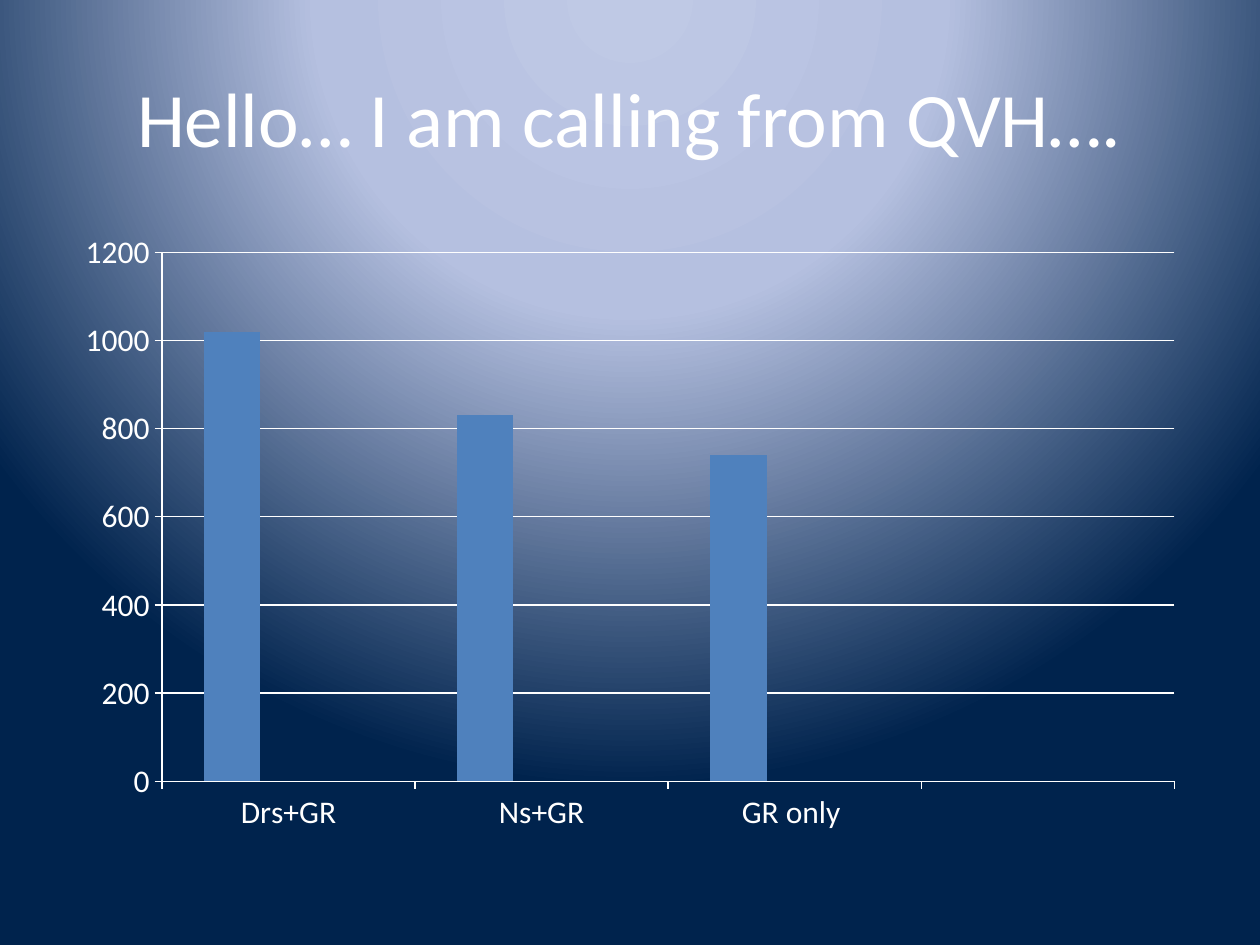
"""Build a slide with a column chart of call counts."""
from pptx import Presentation, oxml
from pptx.chart.data import CategoryChartData
from pptx.dml.color import RGBColor
from pptx.enum import chart as ch, text
from pptx.oxml import ns
from pptx.util import Cm, Pt

FONT = "Calibri"
HEX = {
    "white": "FFFFFF", "glow": "BFC9E5", "mid": "B5C0E0", "navy": "00234D",
    "blue": "4F81BD", "red": "C0504D", "green": "9BBB59",
}
STOPS = [(0, "glow"), (40, "mid"), (100, "navy")]
CATS = ["Drs+GR", "Ns+GR", "GR only ", ""]
ROWS = [
    ("Series 1", [1020, 830, 740, None], "blue"),
    ("Series 2", [None] * 4, "red"),
    ("Series 3", [None] * 4, "green"),
]


def rgb(name):
    """Return a named colour."""
    return RGBColor.from_string(HEX[name])


def style(font, size):
    """Set the face, size and white colour of a font."""
    font.name = FONT
    font.size = Pt(size)
    font.color.rgb = rgb("white")


def add_back(slide):
    """Fill the background with a round gradient lit from the top."""
    stops = "".join(
        f'<a:gs pos="{pos * 1000}"><a:srgbClr val="{HEX[name]}"/></a:gs>'
        for pos, name in STOPS
    )
    back = oxml.parse_xml(
        f'<p:bg {ns.nsdecls("p", "a")}><p:bgPr><a:gradFill rotWithShape="1">'
        f'<a:gsLst>{stops}</a:gsLst><a:path path="circle">'
        '<a:fillToRect l="50000" t="-80000" r="50000" b="180000"/></a:path>'
        '</a:gradFill><a:effectLst/></p:bgPr></p:bg>'
    )
    slide.element.cSld.insert(0, back)


def add_title(slide, words):
    """Place and format the title."""
    title = slide.shapes.title
    title.left, title.top = Cm(1.27), Cm(0.76)
    title.width, title.height = Cm(22.86), Cm(3.18)
    frame = title.text_frame
    frame.text = words
    frame.vertical_anchor = text.MSO_ANCHOR.MIDDLE
    para = frame.paragraphs[0]
    para.alignment = text.PP_ALIGN.CENTER
    style(para.runs[0].font, 44)


def paint(line):
    """Make a chart line thin and white."""
    line.color.rgb = rgb("white")
    line.width = Pt(0.75)


def add_bars(slide):
    """Add the clustered column chart."""
    data = CategoryChartData()
    data.categories = CATS
    for name, vals, _ in ROWS:
        data.add_series(name, vals)
    chart = slide.shapes.add_chart(
        ch.XL_CHART_TYPE.COLUMN_CLUSTERED,
        Cm(1.27), Cm(4.45), Cm(22.86), Cm(12.57), data,
    ).chart
    chart.has_legend = False
    chart.has_title = False
    style(chart.font, 18)
    plot = chart.plots[0]
    plot.vary_by_categories = False
    plot.gap_width = 150
    plot.overlap = 0
    for bar, (_, _, tint) in zip(plot.series, ROWS):
        bar.format.fill.solid()
        bar.format.fill.fore_color.rgb = rgb(tint)
    for axis in (chart.category_axis, chart.value_axis):
        axis.major_tick_mark = ch.XL_TICK_MARK.OUTSIDE
        axis.minor_tick_mark = ch.XL_TICK_MARK.NONE
        paint(axis.format.line)
    scale = chart.value_axis
    scale.minimum_scale, scale.maximum_scale = 0, 1200
    scale.major_unit = 200
    scale.has_major_gridlines = True
    paint(scale.major_gridlines.format.line)


def main():
    """Build and save the slide."""
    prs = Presentation()
    prs.slide_width, prs.slide_height = Cm(25.4), Cm(19.05)
    slide = prs.slides.add_slide(prs.slide_layouts[5])
    add_back(slide)
    add_title(slide, "Hello… I am calling from QVH….")
    add_bars(slide)
    prs.save("out.pptx")


if __name__ == "__main__":
    main()
